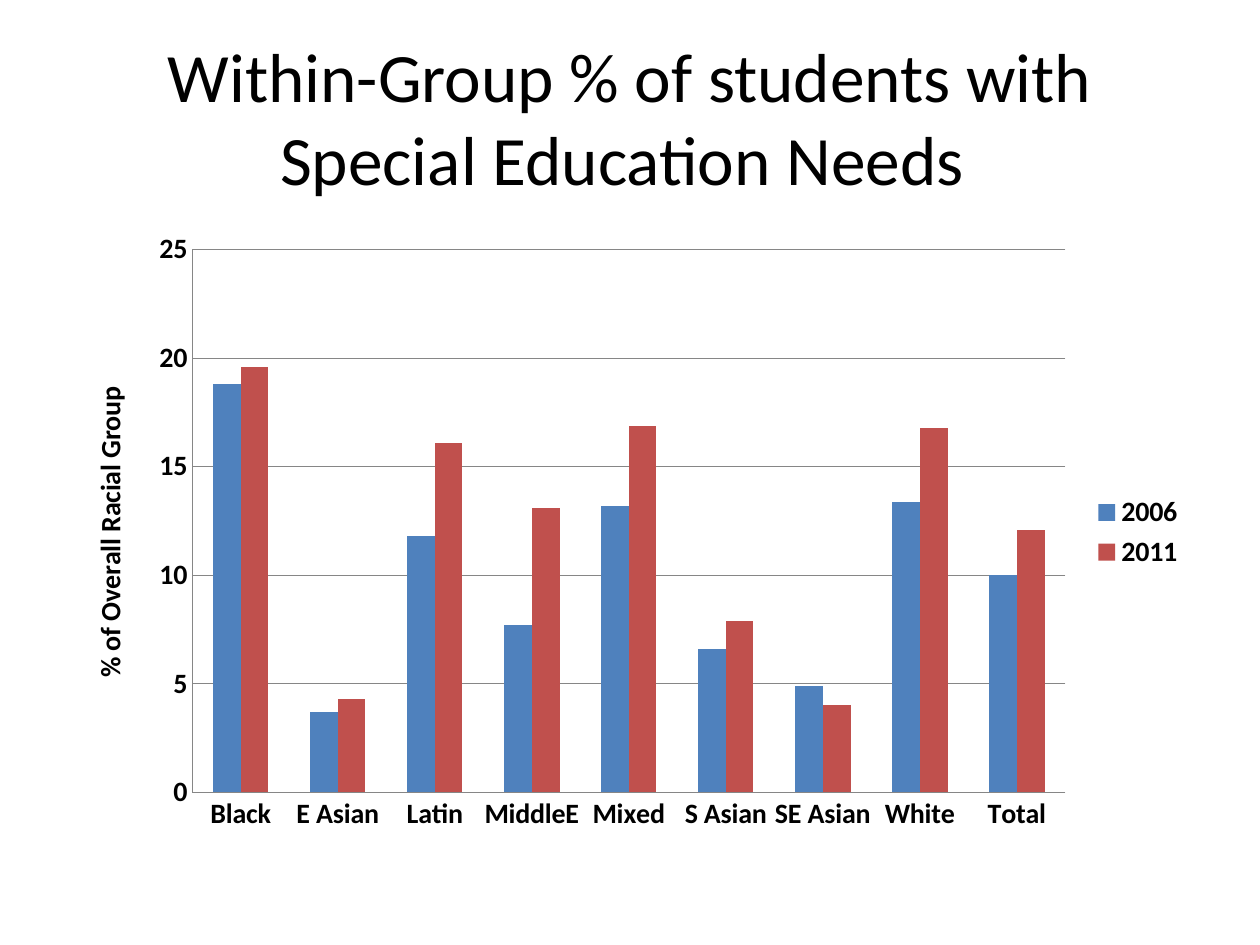
"""Build a slide comparing special education shares by racial group."""
from dataclasses import dataclass
from typing import Any

import pptx
import pptx.chart.data
import pptx.dml.color
import pptx.enum.chart
import pptx.enum.text
import pptx.oxml
import pptx.oxml.ns
import pptx.util

Pt = pptx.util.Pt


@dataclass(frozen=True)
class YearSeries:
    year: str
    percentages: tuple[float, ...]
    color: str


GROUPS = ("Black", "E Asian", "Latin", "MiddleE", "Mixed", "S Asian", "SE Asian", "White", "Total")
YEARS = (
    YearSeries("2006", (18.8, 3.7, 11.8, 7.7, 13.2, 6.6, 4.9, 13.4, 10), "4F81BD"),
    YearSeries("2011", (19.6, 4.3, 16.1, 13.1, 16.9, 7.9, 4, 16.8, 12.1), "C0504D"),
)
TEXT_COLOR = "000000"
LINE_COLOR = "868686"
TITLE_FORMAT = {"name": "Calibri", "size": Pt(39.6), "bold": False}
CHART_FORMAT = {"name": "Calibri", "size": Pt(16), "bold": True}
PLOT_AREA = {"x": 0.114, "y": 0.047, "w": 0.77, "h": 0.87}


def apply_format(target: Any, values: dict[str, Any]) -> None:
    for name, value in values.items():
        setattr(target, name, value)


def paint(target: Any, color: str) -> None:
    target.rgb = pptx.dml.color.RGBColor.from_string(color)


def style_font(font: Any, values: dict[str, Any]) -> None:
    apply_format(font, values)
    paint(font.color, TEXT_COLOR)


def style_line(line: Any) -> None:
    line.width = Pt(0.75)
    paint(line.color, LINE_COLOR)


def add_title(page: Any, text: str) -> None:
    box = page.shapes.add_textbox(Pt(36), Pt(21.6), Pt(648), Pt(90))
    apply_format(box.text_frame, {
        "word_wrap": True,
        "vertical_anchor": pptx.enum.text.MSO_ANCHOR.MIDDLE,
    })
    para = box.text_frame.paragraphs[0]
    para.alignment = pptx.enum.text.PP_ALIGN.CENTER
    span = para.add_run()
    span.text = text
    style_font(span.font, TITLE_FORMAT)


def place_plot(chart: Any) -> None:
    plot_area = chart.plots[0]._element.getparent()
    for old in plot_area.findall(pptx.oxml.ns.qn("c:layout")):
        plot_area.remove(old)
    modes = '<c:layoutTarget val="inner"/><c:xMode val="edge"/><c:yMode val="edge"/>'
    sizes = "".join(f'<c:{name} val="{value}"/>' for name, value in PLOT_AREA.items())
    plot_area.insert(0, pptx.oxml.parse_xml(
        f'<c:layout {pptx.oxml.ns.nsdecls("c")}>'
        f"<c:manualLayout>{modes}{sizes}</c:manualLayout></c:layout>"
    ))


def style_axes(chart: Any, value_title: str) -> None:
    for axis in (chart.category_axis, chart.value_axis):
        apply_format(axis, {
            "major_tick_mark": pptx.enum.chart.XL_TICK_MARK.NONE,
            "minor_tick_mark": pptx.enum.chart.XL_TICK_MARK.NONE,
        })
        style_line(axis.format.line)
    value_axis = chart.value_axis
    apply_format(value_axis, {
        "minimum_scale": 0, "maximum_scale": 25, "major_unit": 5, "has_major_gridlines": True,
    })
    style_line(value_axis.major_gridlines.format.line)
    para = value_axis.axis_title.text_frame.paragraphs[0]
    span = para.add_run()
    span.text = value_title
    style_font(span.font, CHART_FORMAT)


def add_group_chart(page: Any, years: tuple[YearSeries, ...]) -> None:
    data = pptx.chart.data.CategoryChartData()
    data.categories = GROUPS
    for entry in years:
        data.add_series(entry.year, entry.percentages)
    frame = page.shapes.add_chart(
        pptx.enum.chart.XL_CHART_TYPE.COLUMN_CLUSTERED, Pt(36), Pt(126), Pt(648), Pt(356.4), data
    )
    chart = frame.chart
    apply_format(chart, {"has_title": False, "has_legend": True})
    style_font(chart.font, CHART_FORMAT)
    apply_format(chart.legend, {
        "position": pptx.enum.chart.XL_LEGEND_POSITION.RIGHT, "include_in_layout": False,
    })
    apply_format(chart.plots[0], {"gap_width": 150, "overlap": 0, "vary_by_categories": False})
    for series, entry in zip(chart.plots[0].series, years):
        series.format.fill.solid()
        paint(series.format.fill.fore_color, entry.color)
    style_axes(chart, "% of Overall Racial Group")
    place_plot(chart)


def main() -> None:
    deck = pptx.Presentation()
    apply_format(deck, {"slide_width": Pt(720), "slide_height": Pt(540)})
    page = deck.slides.add_slide(deck.slide_layouts[6])
    add_title(page, "Within-Group % of students with Special Education Needs ")
    add_group_chart(page, YEARS)
    deck.save("out.pptx")


if __name__ == "__main__":
    main()
